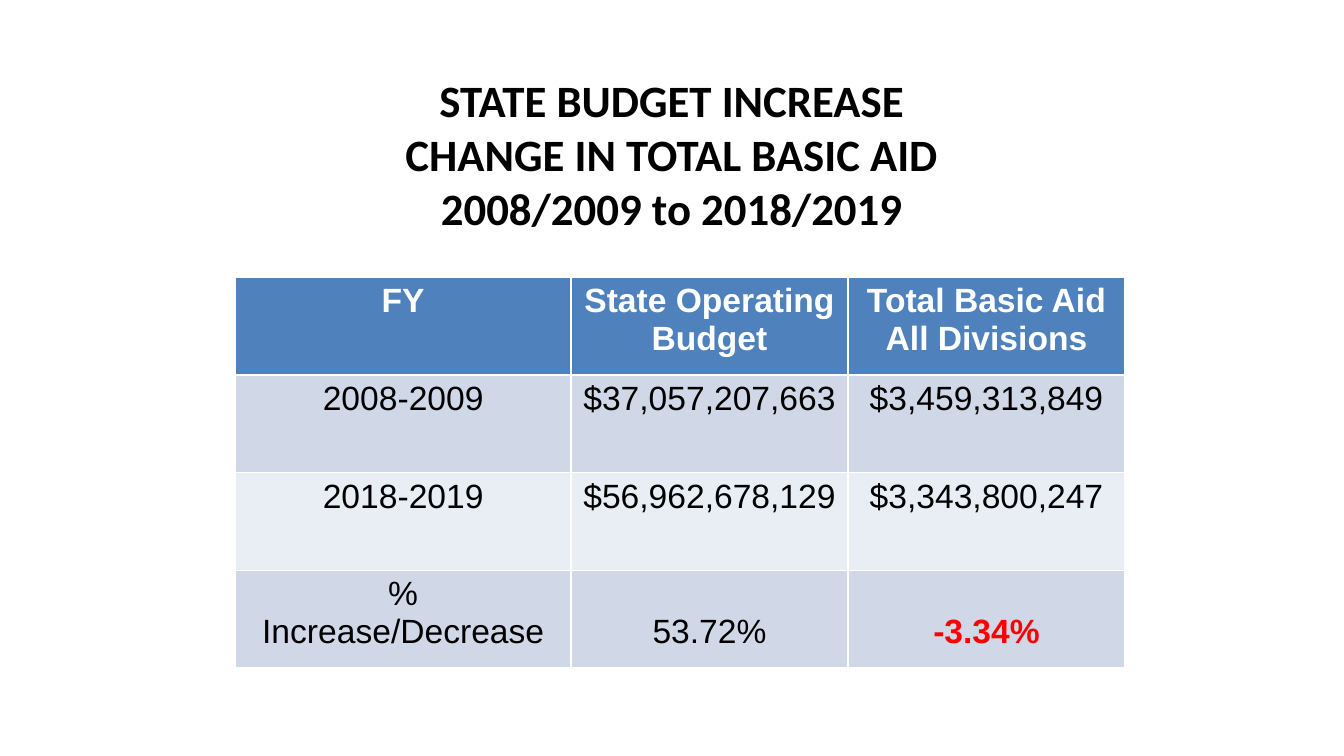
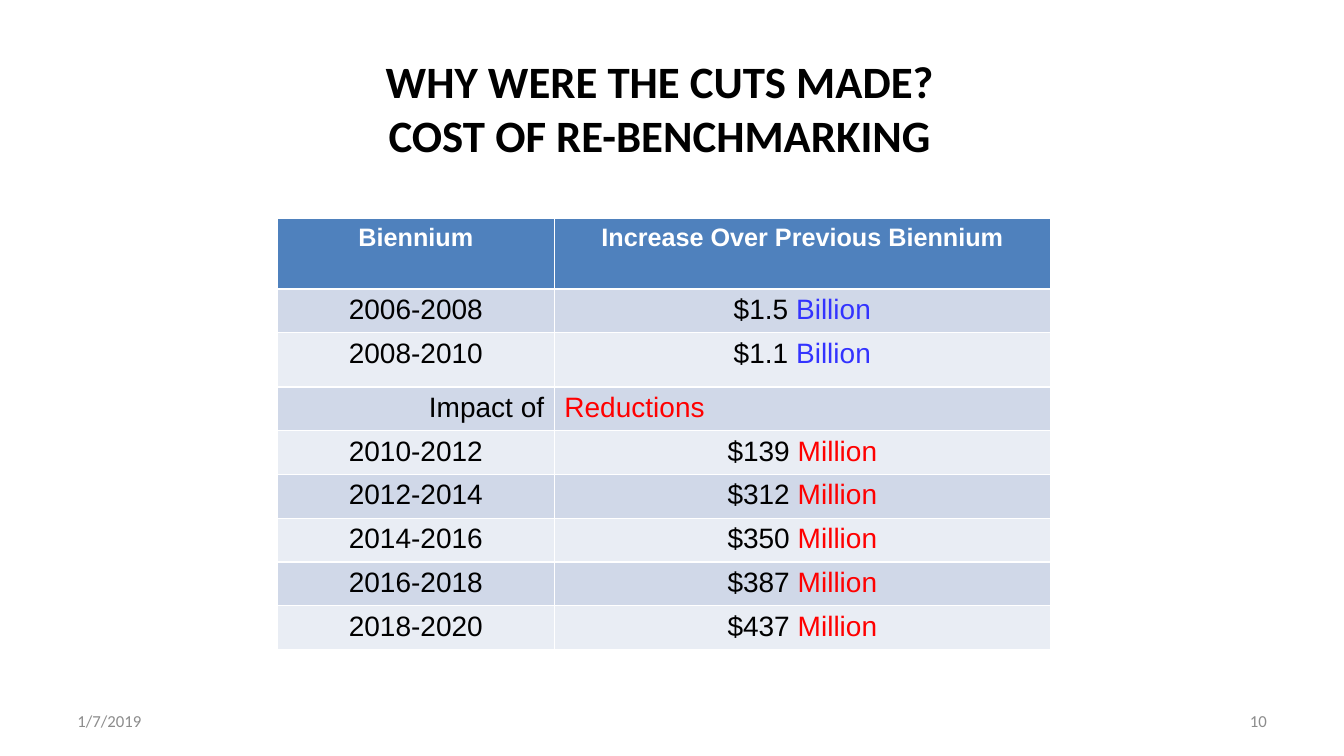
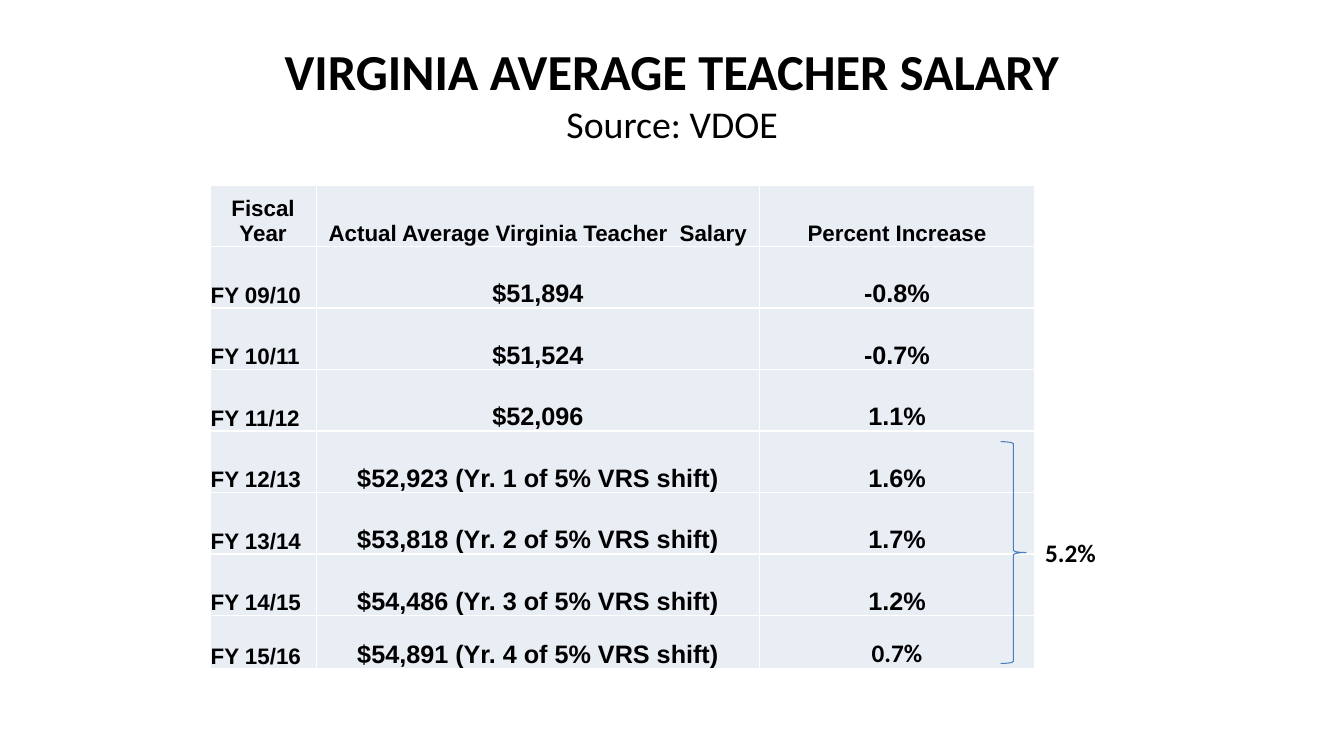
"""Builds three slides of school budget tables."""
import pptx
import pptx.dml.color
import pptx.enum.shapes
import pptx.enum.text
import pptx.util

Cm = pptx.util.Cm
ALIGN = pptx.enum.text.PP_ALIGN
ANCHOR = pptx.enum.text.MSO_ANCHOR

BLACK, WHITE, GRAY, RED, BLUE = "000000", "FFFFFF", "8C8C8C", "FF0000", "3333FF"
HEADER, BAND_DARK, BAND_LIGHT, BRACE = "4F81BD", "D0D8E8", "E9EDF4", "4B7EBC"
ACCENTS = {"Billion": BLUE, "Million": RED, "Reductions": RED, "-3.34%": RED}

BUDGET_TITLE = ["STATE BUDGET INCREASE", "CHANGE IN TOTAL BASIC AID", "2008/2009 to 2018/2019"]
BUDGET_ROWS = [
    ("FY", "State Operating Budget", "Total Basic Aid\nAll Divisions"),
    ("2008-2009", "$37,057,207,663", "$3,459,313,849"),
    ("2018-2019", "$56,962,678,129", "$3,343,800,247"),
    ("% Increase/Decrease", "53.72%", "-3.34%"),
]
CUTS_TITLE = ["WHY WERE THE CUTS MADE?", "COST OF RE-BENCHMARKING"]
CUTS_ROWS = [
    ("Biennium", "Increase Over Previous Biennium"),
    ("2006-2008", "$1.5 Billion"),
    ("2008-2010", "$1.1 Billion"),
    ("Impact of", "Reductions"),
    ("2010-2012", "$139 Million"),
    ("2012-2014", "$312 Million"),
    ("2014-2016", "$350 Million"),
    ("2016-2018", "$387 Million"),
    ("2018-2020", "$437 Million"),
]
SALARY_TITLE = ["VIRGINIA AVERAGE TEACHER SALARY", "Source: VDOE"]
SALARY_ROWS = [
    ("Fiscal Year", "Actual Average Virginia Teacher  Salary", "Percent Increase"),
    ("FY 09/10", "$51,894", "-0.8%"),
    ("FY 10/11", "$51,524", "-0.7%"),
    ("FY 11/12", "$52,096", "1.1%"),
    ("FY 12/13", "$52,923 (Yr. 1 of 5% VRS shift)", "1.6%"),
    ("FY 13/14", "$53,818 (Yr. 2 of 5% VRS shift)", "1.7%"),
    ("FY 14/15", "$54,486 (Yr. 3 of 5% VRS shift)", "1.2%"),
    ("FY 15/16", "$54,891 (Yr. 4 of 5% VRS shift)", "0.7%"),
]


def rgb(value):
    return pptx.dml.color.RGBColor.from_string(value)


def style(para, size, color=BLACK, bold=False, align=ALIGN.CENTER, font="Calibri"):
    para.alignment = align
    para.font.name = font
    para.font.size = pptx.util.Pt(size)
    para.font.bold = bold
    para.font.color.rgb = rgb(color)


def add_text(page, area, lines, size, anchor=ANCHOR.MIDDLE, **look):
    frame = page.shapes.add_textbox(*map(Cm, area)).text_frame
    frame.word_wrap = True
    frame.vertical_anchor = anchor
    frame.text = "\n".join(lines)
    for para in frame.paragraphs:
        style(para, size, **look)
    return frame


def fill_cell(cell, text, fill, size, **look):
    cell.fill.solid()
    cell.fill.fore_color.rgb = rgb(fill)
    frame = cell.text_frame
    frame.text = text
    for para in frame.paragraphs:
        style(para, size, font="Arial", **look)
    last_word = text.split()[-1]
    if last_word in ACCENTS:
        para = frame.paragraphs[0]
        para.runs[0].text = text.removesuffix(last_word)
        span = para.add_run() if para.runs[0].text else para.runs[0]
        span.text = last_word
        span.font.color.rgb = rgb(ACCENTS[last_word])


def add_grid(page, left, top, widths, heights):
    frame = page.shapes.add_table(
        len(heights), len(widths), Cm(left), Cm(top), Cm(sum(widths)), Cm(sum(heights)))
    for column, width in zip(frame.table.columns, widths):
        column.width = Cm(width)
    for row, height in zip(frame.table.rows, heights):
        row.height = Cm(height)
    return frame.table


def add_banded_table(page, left, top, widths, heights, rows, header_size, size):
    table = add_grid(page, left, top, widths, heights)
    for index, row in enumerate(rows):
        for column, text in enumerate(row):
            cell = table.cell(index, column)
            if index == 0:
                fill_cell(cell, text, HEADER, header_size, color=WHITE, bold=True)
            else:
                fill_cell(cell, text, BAND_DARK if index % 2 else BAND_LIGHT, size)
    return table


def build_budget(page):
    add_text(page, (5.5, 0.76, 22.86, 6.22), BUDGET_TITLE, 32, bold=True)
    table = add_banded_table(
        page, 5.93, 6.99, [8.46, 6.98, 6.98], [2.46] * 4, BUDGET_ROWS, 24, 24)
    for column in (1, 2):
        table.cell(3, column).margin_top = Cm(1.09)
    table.cell(3, 2).text_frame.paragraphs[0].font.bold = True


def build_cuts(page):
    add_text(page, (6.15, 0.76, 20.96, 3.89), CUTS_TITLE, 32, bold=True)
    heights = [1.78, 1.04, 1.37] + [1.04] * 6
    table = add_banded_table(page, 6.99, 5.5, [6.98, 12.5], heights, CUTS_ROWS, 18, 20)
    for column, align in enumerate((ALIGN.RIGHT, ALIGN.LEFT)):
        table.cell(3, column).text_frame.paragraphs[0].alignment = align
    for left, text, align in ((1.7, "1/7/2019", ALIGN.LEFT), (24.28, "10", ALIGN.RIGHT)):
        add_text(page, (left, 17.65, 7.9, 1.02), [text], 12, color=GRAY, align=align)


def build_salary(page):
    title = add_text(page, (1.7, 0.76, 30.48, 3.18), SALARY_TITLE, 36, bold=True)
    style(title.paragraphs[1], 27)
    table = add_grid(page, 5.29, 4.66, [2.68, 11.17, 6.93], [1.55] * 7 + [1.35])
    table.first_row = False
    for index, row in enumerate(SALARY_ROWS):
        for column, text in enumerate(row):
            cell = table.cell(index, column)
            label = index > 0 and column == 0
            fill_cell(cell, text, BAND_LIGHT, 16 if index == 0 or label else 18, bold=True,
                      align=ALIGN.LEFT if label else ALIGN.CENTER)
            cell.vertical_anchor = ANCHOR.BOTTOM
            cell.margin_left = cell.margin_right = cell.margin_top = Cm(0.02)
            cell.margin_bottom = 0
    table.cell(7, 2).text_frame.paragraphs[0].font.name = "Calibri"
    brace = page.shapes.add_shape(
        pptx.enum.shapes.MSO_SHAPE.RIGHT_BRACE, Cm(25.22), Cm(11.13), Cm(0.64), Cm(5.59))
    brace.shadow.inherit = False
    brace.fill.background()
    brace.line.color.rgb = rgb(BRACE)
    brace.line.width = pptx.util.Pt(0.75)
    add_text(page, (26.09, 13.41, 1.98, 1.02), ["5.2%"], 18, ANCHOR.TOP, bold=True, align=ALIGN.LEFT)


def main():
    deck = pptx.Presentation()
    deck.slide_width, deck.slide_height = Cm(33.87), Cm(19.05)
    for build in (build_budget, build_cuts, build_salary):
        build(deck.slides.add_slide(deck.slide_layouts[6]))
    deck.save("out.pptx")


if __name__ == "__main__":
    main()
